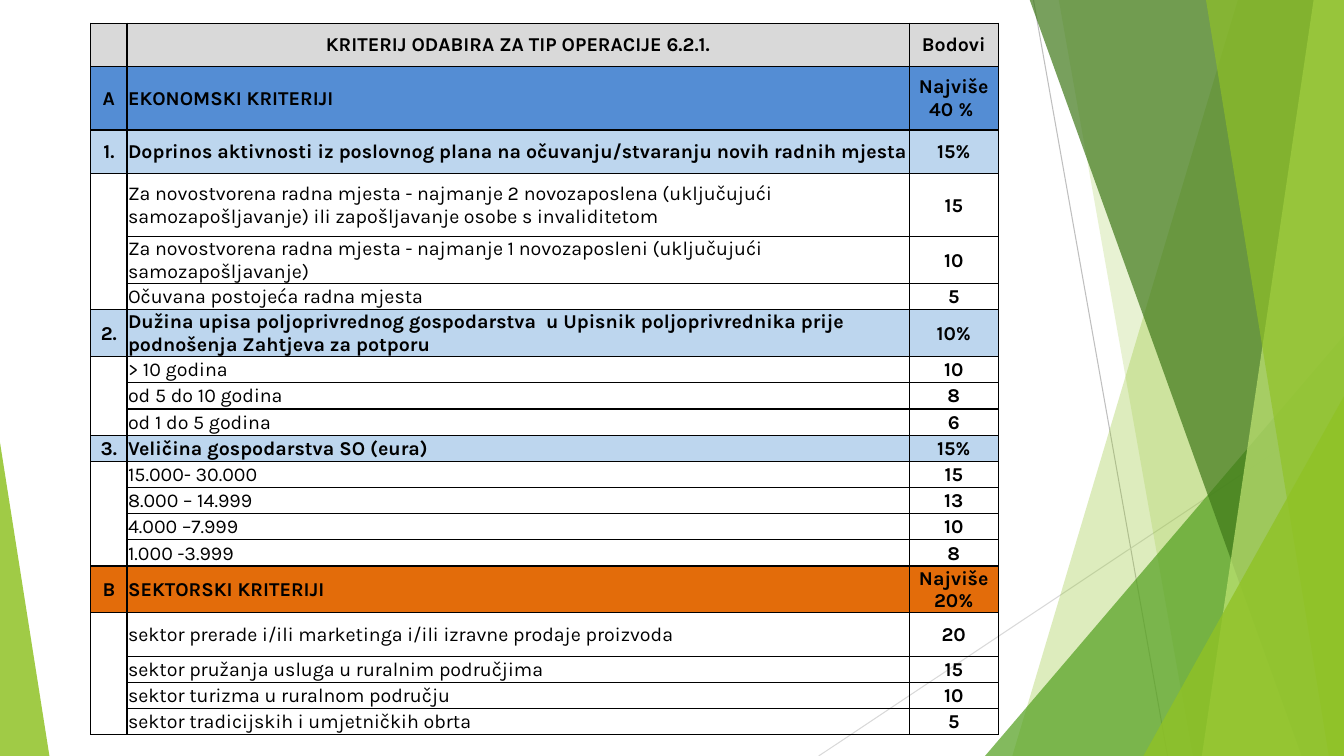
"""Build the slide with the selection criteria table for operation type 6.2.1."""
import dataclasses
import itertools
import typing

import lxml.etree
import pptx
import pptx.dml.color
import pptx.enum.shapes
import pptx.enum.text
import pptx.oxml.ns
import pptx.util

Inches = pptx.util.Inches
Pt = pptx.util.Pt
RGBColor = pptx.dml.color.RGBColor
Align = pptx.enum.text.PP_ALIGN
qn = pptx.oxml.ns.qn

WIDTH, HEIGHT, TOP = 13.33, 7.5, -0.01
FONT = "Karla"
BLACK = RGBColor(0x00, 0x00, 0x00)
WHITE = RGBColor(0xFF, 0xFF, 0xFF)
GREY = RGBColor(0xD9, 0xD9, 0xD9)
SILVER = RGBColor(0xBF, 0xBF, 0xBF)
BLUE = RGBColor(0x54, 0x8D, 0xD4)
PALE = RGBColor(0xBD, 0xD6, 0xEE)
ORANGE = RGBColor(0xE3, 0x6C, 0x0A)
LIME = RGBColor(0x90, 0xC2, 0x26)
GREEN = RGBColor(0x54, 0xA0, 0x21)
FOREST = RGBColor(0x3F, 0x78, 0x19)
LIGHT = RGBColor(0xC0, 0xE4, 0x74)


@dataclasses.dataclass
class Ray:
    start: tuple[float, float]
    end: tuple[float, float]
    color: RGBColor


@dataclasses.dataclass
class Shard:
    head: float
    foot: float
    color: RGBColor
    alpha: int


@dataclasses.dataclass
class Wedge:
    left: float
    top: float
    width: float
    apex: float
    color: RGBColor
    alpha: int


@dataclasses.dataclass
class Row:
    mark: str
    text: str
    score: str
    height: float = 0.26
    tone: typing.Optional[RGBColor] = None


RAYS = [
    Ray((10.25, 0), (11.58, HEIGHT), SILVER),
    Ray((WIDTH, 4.03), (8.12, HEIGHT), GREY),
]
PANES = [
    Shard(12.28, 10.04, LIME, 30),
    Shard(10.5, 11.83, LIME, 20),
    Wedge(9.77, 3.33, 3.56, 1, GREEN, 72),
    Shard(10.21, 12.91, FOREST, 70),
    Shard(13.03, 11.92, LIGHT, 70),
    Shard(11.96, 13.18, LIME, 65),
    Wedge(11.34, 3.93, 1.99, 1, LIME, 80),
    Wedge(0, 4.39, 0.49, 0, LIME, 85),
]
COLS = [0.36, 7.76, 0.88]
ROWS = [
    Row("", "KRITERIJ ODABIRA ZA TIP OPERACIJE 6.2.1.", "Bodovi", 0.43, GREY),
    Row("A", "EKONOMSKI KRITERIJI", "Najviše 40 % ", 0.63, BLUE),
    Row("1.", "Doprinos aktivnosti iz poslovnog plana na očuvanju/stvaranju "
        "novih radnih mjesta", "15%", 0.43, PALE),
    Row("", "Za novostvorena radna mjesta - najmanje 2 novozaposlena (uključujući "
        "samozapošljavanje) ili zapošljavanje osobe s invaliditetom", "15", 0.63, WHITE),
    Row("", "Za novostvorena radna mjesta - najmanje 1 novozaposleni (uključujući "
        "samozapošljavanje)", "10", 0.43, WHITE),
    Row("", "Očuvana postojeća radna mjesta", "5", tone=WHITE),
    Row("2.", "Dužina upisa poljoprivrednog gospodarstva  u Upisnik poljoprivrednika "
        "prije podnošenja Zahtjeva za potporu", "10%", 0.43, PALE),
    Row("", "> 10 godina", "10", tone=WHITE),
    Row("", "od 5 do 10 godina", "8", tone=WHITE),
    Row("", "od 1 do 5 godina", "6", tone=WHITE),
    Row("3.", "Veličina gospodarstva SO (eura)", "15%", tone=PALE),
    Row("", "15.000- 30.000", "15"),
    Row("", "8.000 – 14.999", "13"),
    Row("", "4.000 –7.999", "10"),
    Row("", "1.000 -3.999", "8"),
    Row("B", "SEKTORSKI KRITERIJI", "Najviše 20%", 0.43, ORANGE),
    Row("", "sektor prerade i/ili marketinga i/ili izravne prodaje proizvoda", "20", 0.43),
    Row("", "sektor pružanja usluga u ruralnim područjima", "15"),
    Row("", "sektor turizma u ruralnom području", "10"),
    Row("", "sektor tradicijskih i umjetničkih obrta", "5"),
]


def draw_ray(shapes, ray: Ray) -> None:
    ends = [Inches(n) for n in ray.start + ray.end]
    line = shapes.add_connector(pptx.enum.shapes.MSO_CONNECTOR.STRAIGHT, *ends)
    line.line.color.rgb = ray.color
    line.line.width = Pt(0.75)
    props = line._element.find(qn("p:spPr"))
    lxml.etree.SubElement(props, qn("a:effectLst"))


def draw_pane(shapes, pane: Shard | Wedge) -> None:
    if isinstance(pane, Shard):
        pen = shapes.build_freeform(Inches(pane.head), Inches(TOP))
        ends = [(WIDTH, TOP), (WIDTH, HEIGHT), (pane.foot, HEIGHT)]
        pen.add_line_segments([(Inches(x), Inches(y)) for x, y in ends])
        shape = pen.convert_to_shape()
    else:
        shape = shapes.add_shape(
            pptx.enum.shapes.MSO_SHAPE.ISOSCELES_TRIANGLE,
            Inches(pane.left), Inches(pane.top),
            Inches(pane.width), Inches(HEIGHT - pane.top))
        shape.adjustments[0] = pane.apex
    shape.shadow.inherit = False
    shape.line.fill.background()
    shape.fill.solid()
    shape.fill.fore_color.rgb = pane.color
    color = shape._element.spPr.find(qn("a:solidFill"))[0]
    lxml.etree.SubElement(color, qn("a:alpha"), val=str(pane.alpha * 1000))


def add_edges(cell) -> None:
    props = cell._tc.get_or_add_tcPr()
    for side in ("lnL", "lnR", "lnT", "lnB"):
        edge = lxml.etree.SubElement(props, qn(f"a:{side}"), w=str(Pt(1)))
        fill = lxml.etree.SubElement(edge, qn("a:solidFill"))
        lxml.etree.SubElement(fill, qn("a:srgbClr"), val=str(BLACK))


def fill_cell(cell, text: str, tone: typing.Optional[RGBColor],
              align: Align, bold: bool) -> None:
    add_edges(cell)
    if tone is None:
        cell.fill.background()
    else:
        cell.fill.solid()
        cell.fill.fore_color.rgb = tone
    cell.margin_left = cell.margin_right = cell.margin_top = Inches(0.01)
    cell.margin_bottom = 0
    cell.vertical_anchor = pptx.enum.text.MSO_ANCHOR.MIDDLE
    cell.text = text
    para = cell.text_frame.paragraphs[0]
    para.alignment = align
    para.font.name = FONT
    para.font.size = Pt(14)
    para.font.bold = bold
    para.font.color.rgb = BLACK


def draw_table(shapes, rows: list[Row]) -> None:
    tall = sum(row.height for row in rows)
    table = shapes.add_table(len(rows), len(COLS), Inches(0.9), Inches(0.23),
                             Inches(sum(COLS)), Inches(tall)).table
    table.first_row = table.horz_banding = False
    for col, width in zip(table.columns, COLS):
        col.width = Inches(width)
    for r, row in enumerate(rows):
        table.rows[r].height = Inches(row.height)
        head = r == 0
        side = Align.CENTER if head else Align.LEFT
        fill_cell(table.cell(r, 0), row.mark, row.tone, Align.CENTER, True)
        fill_cell(table.cell(r, 1), row.text, row.tone, side, head or bool(row.mark))
        fill_cell(table.cell(r, 2), row.score, row.tone, Align.CENTER, True)
    for mark, group in itertools.groupby(range(1, len(rows)), lambda r: rows[r].mark):
        span = list(group)
        if not mark:
            table.cell(span[0], 0).merge(table.cell(span[-1], 0))


def main() -> None:
    deck = pptx.Presentation()
    deck.slide_width = Inches(WIDTH)
    deck.slide_height = Inches(HEIGHT)
    shapes = deck.slides.add_slide(deck.slide_layouts[6]).shapes
    for ray in RAYS:
        draw_ray(shapes, ray)
    for pane in PANES:
        draw_pane(shapes, pane)
    draw_table(shapes, ROWS)
    deck.save("out.pptx")


if __name__ == "__main__":
    main()
